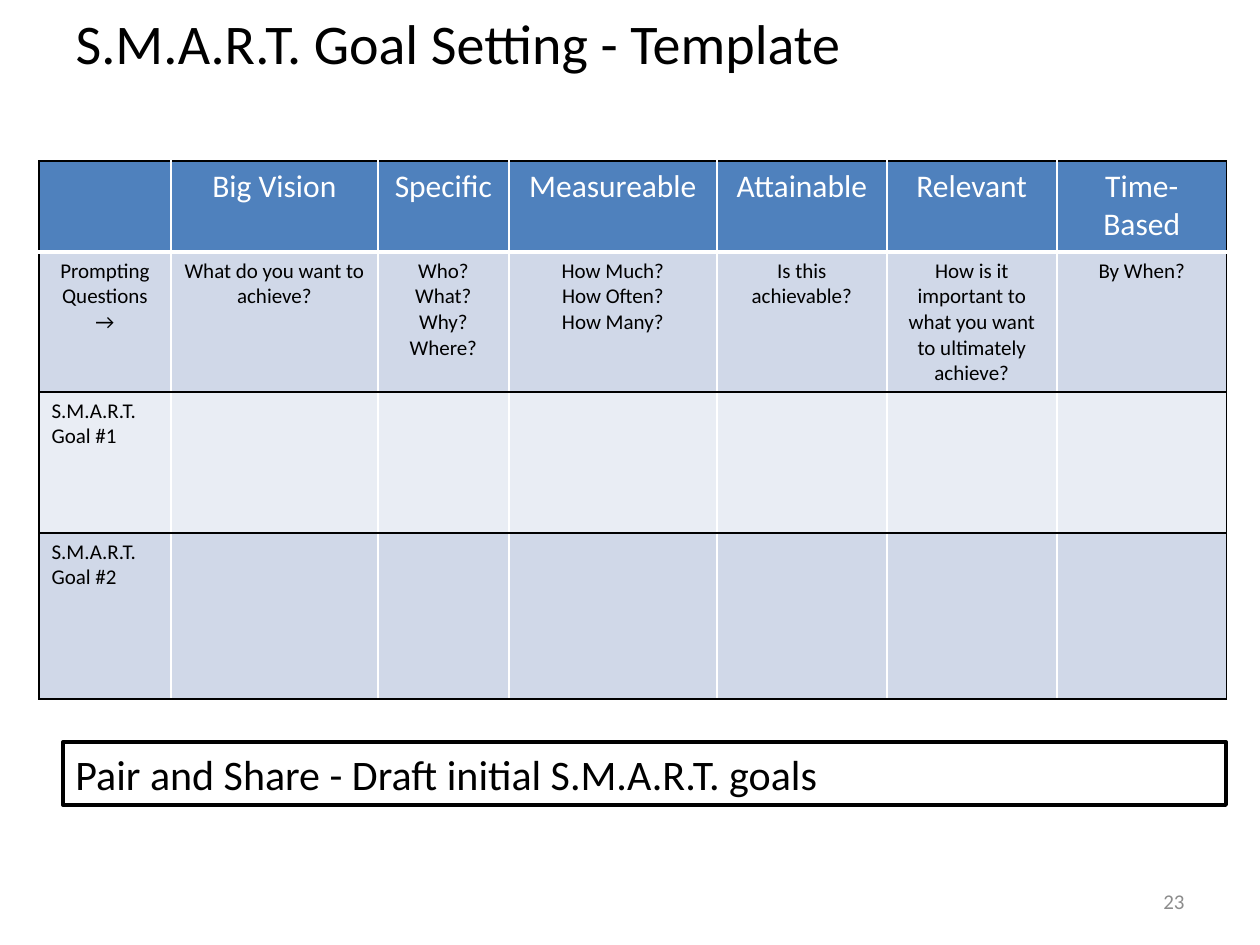
import dataclasses
import pptx
import pptx.util
import pptx.dml.color
import pptx.enum.shapes
import pptx.enum.text
import pptx.oxml

ALIGN = pptx.enum.text.PP_ALIGN
MIDDLE = pptx.enum.text.MSO_ANCHOR.MIDDLE
SCALE = 914400 / 126


@dataclasses.dataclass(frozen=True)
class Theme:
    font: str = "Calibri"
    black: str = "000000"
    white: str = "FFFFFF"
    gray: str = "8C8C8C"
    head: str = "4F81BD"
    dark: str = "D0D8E8"
    light: str = "E9EDF4"
    title: int = 32
    task: int = 24
    label: int = 18
    small: int = 12


THEME = Theme()
WIDTHS = [132, 207, 131, 208, 170, 170, 170]
HEIGHTS = [91, 140, 141, 166]
FILLS = [THEME.head, THEME.dark, THEME.light, THEME.dark]
ROWS = [
    ["", "Big Vision", "Specific", "Measureable", "Attainable", "Relevant",
     "Time-Based"],
    ["Prompting Questions\v→", "What do you want to achieve?",
     "Who?\nWhat?\nWhy?\nWhere?", "How Much?\nHow Often?\nHow Many?",
     "Is this achievable?",
     "How is it important to what you want to ultimately achieve?",
     "By When?"],
    ["S.M.A.R.T. Goal #1"] + [""] * 6,
    ["S.M.A.R.T. Goal #2"] + [""] * 6,
]


def px(size):
    return pptx.util.Emu(round(size * SCALE))


def color(code):
    return pptx.dml.color.RGBColor.from_string(code)


def write(frame, text, size, ink, align=ALIGN.LEFT):
    frame.text = text
    for para in frame.paragraphs:
        para.alignment = align
        para.font.name = THEME.font
        para.font.size = pptx.util.Pt(size)
        para.font.bold = False
        para.font.color.rgb = color(ink)


def edge(cell, side, ink, width=1):
    space = "http://schemas.openxmlformats.org/drawingml/2006/main"
    line = pptx.oxml.parse_xml(
        f'<a:ln{side} xmlns:a="{space}" w="{pptx.util.Pt(width)}">'
        f'<a:solidFill><a:srgbClr val="{ink}"/></a:solidFill></a:ln{side}>')
    cell._tc.get_or_add_tcPr().append(line)


def add_title(slide, left, top, width, height):
    title = slide.shapes.title
    title.left, title.top = px(left), px(top)
    title.width, title.height = px(width), px(height)
    frame = title.text_frame
    frame.vertical_anchor = MIDDLE
    write(frame, "S.M.A.R.T. Goal Setting - Template", THEME.title, THEME.black)


def add_goals(slide, left, top):
    table = slide.shapes.add_table(
        len(HEIGHTS), len(WIDTHS), px(left), px(top),
        px(sum(WIDTHS)), px(sum(HEIGHTS))).table
    table.first_row = table.horz_banding = False
    for column, width in zip(table.columns, WIDTHS):
        column.width = px(width)
    for row, height in zip(table.rows, HEIGHTS):
        row.height = px(height)
    last = len(WIDTHS) - 1
    for r, texts in enumerate(ROWS):
        for c, text in enumerate(texts):
            cell = table.cell(r, c)
            edge(cell, "L", THEME.black if c == 0 else THEME.white)
            edge(cell, "R", THEME.black if c == last else THEME.white)
            edge(cell, "T", THEME.white if r == 1 else THEME.black)
            if r == 0:
                edge(cell, "B", THEME.white, 3)
            else:
                edge(cell, "B", THEME.black)
            cell.fill.solid()
            cell.fill.fore_color.rgb = color(FILLS[r])
            size = THEME.label if r == 0 else THEME.small
            ink = THEME.white if r == 0 else THEME.black
            align = ALIGN.CENTER if r < 2 else ALIGN.LEFT
            write(cell.text_frame, text, size, ink, align)


def add_task(slide, left, top, width, height):
    box = slide.shapes.add_shape(
        pptx.enum.shapes.MSO_SHAPE.RECTANGLE,
        px(left), px(top), px(width), px(height))
    box.shadow.inherit = False
    box.fill.background()
    box.line.color.rgb = color(THEME.black)
    box.line.width = pptx.util.Pt(2.25)
    box.text_frame.vertical_anchor = pptx.enum.text.MSO_ANCHOR.TOP
    write(box.text_frame, "Pair and Share - Draft initial S.M.A.R.T. goals",
          THEME.task, THEME.black)


def add_number(slide, left, top, width, height):
    box = slide.shapes.add_textbox(px(left), px(top), px(width), px(height))
    frame = box.text_frame
    frame.word_wrap = True
    frame.vertical_anchor = MIDDLE
    write(frame, "23", THEME.small, THEME.gray, ALIGN.RIGHT)


def main():
    deck = pptx.Presentation()
    deck.slide_width, deck.slide_height = px(1260), px(945)
    slide = deck.slides.add_slide(deck.slide_layouts[5])
    add_number(slide, 903, 876, 294, 50)
    add_title(slide, 63, 1, 1150, 83)
    add_goals(slide, 39, 161)
    add_task(slide, 63, 742, 1163, 63)
    deck.save("out.pptx")


if __name__ == "__main__":
    main()
